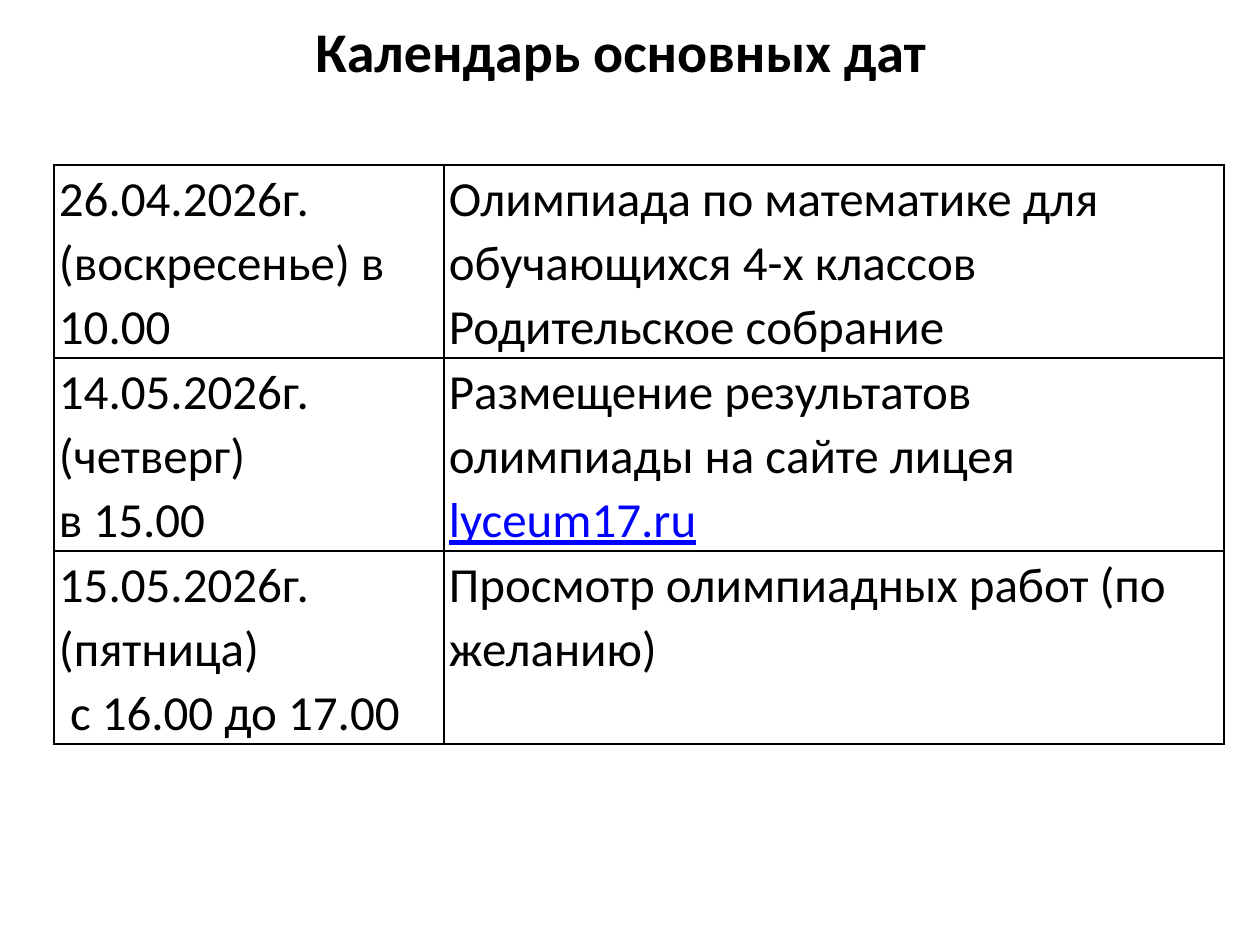
from dataclasses import dataclass

from lxml import etree
from pptx import Presentation
from pptx.dml.color import RGBColor
from pptx.enum.text import MSO_ANCHOR, PP_ALIGN
from pptx.oxml.ns import qn
from pptx.util import Emu, Pt

CENTER = PP_ALIGN.CENTER
MIDDLE = MSO_ANCHOR.MIDDLE
PX_PER_INCH = 126
BLACK = RGBColor(0x00, 0x00, 0x00)
LINK_BLUE = RGBColor(0x00, 0x00, 0xFF)
FONT = "Calibri"
COLUMN_WIDTHS = (390, 780)
ROW_HEIGHT = 193
SITE = "lyceum17.ru"


@dataclass(frozen=True)
class Event:
    when: tuple[str, ...]
    what: tuple[str, ...]
    link: str = ""


EVENTS = (
    Event(("26.04.2026г. (воскресенье) в 10.00",),
          ("Олимпиада по математике для обучающихся 4-х классов",
           "Родительское собрание")),
    Event(("14.05.2026г. (четверг)", "в 15.00"),
          ("Размещение результатов олимпиады на сайте лицея ",), SITE),
    Event(("15.05.2026г. (пятница)", " с 16.00 до 17.00"),
          ("Просмотр олимпиадных работ (по желанию)",)),
)


def px(length: int) -> Emu:
    return Emu(round(length * 914400 / PX_PER_INCH))


def style_font(paragraph, size: int, bold: bool = False) -> None:
    font = paragraph.font
    font.name = FONT
    font.size = Pt(size)
    font.bold = bold
    font.color.rgb = BLACK


def add_title(slide, title: str) -> None:
    heading = slide.shapes.add_textbox(px(54), px(16), px(1134), px(69))
    frame = heading.text_frame
    frame.word_wrap = True
    frame.vertical_anchor = MIDDLE
    paragraph = frame.paragraphs[0]
    paragraph.text = title
    paragraph.alignment = CENTER
    style_font(paragraph, 32, bold=True)


def add_borders(cell) -> None:
    properties = cell._tc.get_or_add_tcPr()
    for side in ("a:lnL", "a:lnR", "a:lnT", "a:lnB"):
        line = etree.SubElement(properties, qn(side), w=str(Pt(1)))
        fill = etree.SubElement(line, qn("a:solidFill"))
        etree.SubElement(fill, qn("a:srgbClr"), val=str(BLACK))


def fill_cell(cell, lines: tuple[str, ...], link: str = "") -> None:
    """Write one paragraph per line, with the link closing the last one."""
    cell.margin_left = cell.margin_right = px(5)
    cell.margin_top = px(1)
    cell.margin_bottom = 0
    add_borders(cell)
    cell.fill.background()
    frame = cell.text_frame
    frame.text = "\n".join(lines)
    for paragraph in frame.paragraphs:
        paragraph.line_spacing = 1.07
        style_font(paragraph, 28)
    if link:
        address = frame.paragraphs[-1].add_run()
        address.text = link
        address.font.underline = True
        address.font.color.rgb = LINK_BLUE


def add_calendar(slide, events: tuple[Event, ...]) -> None:
    calendar = slide.shapes.add_table(
        len(events), len(COLUMN_WIDTHS), px(54), px(165),
        px(sum(COLUMN_WIDTHS)), px(ROW_HEIGHT * len(events))).table
    calendar.first_row = False
    calendar.horz_banding = False
    for column, width in zip(calendar.columns, COLUMN_WIDTHS):
        column.width = px(width)
    for row, event in zip(calendar.rows, events):
        row.height = px(ROW_HEIGHT)
        fill_cell(row.cells[0], event.when)
        fill_cell(row.cells[1], event.what, event.link)


def main() -> None:
    presentation = Presentation()
    presentation.slide_width = px(1260)
    presentation.slide_height = px(945)
    slide = presentation.slides.add_slide(presentation.slide_layouts[6])
    add_title(slide, "Календарь основных дат")
    add_calendar(slide, EVENTS)
    presentation.save("out.pptx")


if __name__ == "__main__":
    main()
